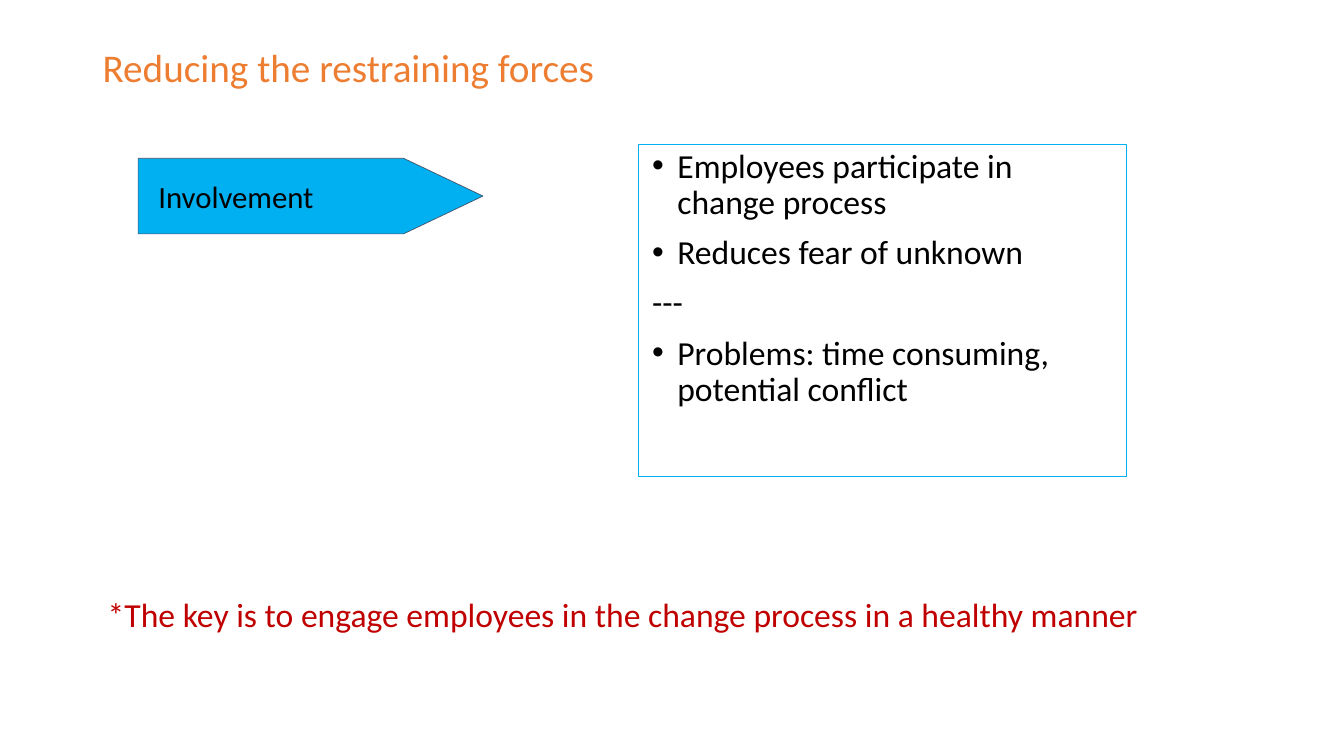
from lxml import etree
from pptx import Presentation
from pptx.dml.color import RGBColor
from pptx.enum.shapes import MSO_SHAPE
from pptx.enum.text import MSO_ANCHOR, PP_ALIGN
from pptx.oxml.ns import qn
from pptx.util import Inches, Pt

RECTANGLE, PENTAGON = MSO_SHAPE.RECTANGLE, MSO_SHAPE.PENTAGON
TOP, MIDDLE = MSO_ANCHOR.TOP, MSO_ANCHOR.MIDDLE
LEFT = PP_ALIGN.LEFT

FONT = "Calibri"
BLACK, ORANGE, RED = "000000", "ED7D31", "C00000"
SKY, SLATE = "00B0F0", "44546A"
SEPARATOR = "---"
INVOLVEMENT_POINTS = [
    "Employees participate in change process",
    "Reduces fear of unknown",
    SEPARATOR,
    "Problems: time consuming, potential conflict",
]


def rgb(hex_color):
    return RGBColor.from_string(hex_color)


def add_text(frame, text, size=24, color=BLACK, line_spacing=1.0, space_before=0):
    """Fill the first paragraph if it is free, otherwise append one."""
    paragraph = frame.paragraphs[0]
    if paragraph.runs:
        paragraph = frame.add_paragraph()
    paragraph.alignment = LEFT
    paragraph.line_spacing = line_spacing
    paragraph.space_before = Pt(space_before)
    run = paragraph.add_run()
    run.text = text
    run.font.name = FONT
    run.font.size = Pt(size)
    run.font.color.rgb = rgb(color)
    return paragraph


def set_indent(paragraph, margin, first_line=0, bullet=None):
    properties = paragraph._p.get_or_add_pPr()
    properties.set("marL", str(Inches(margin)))
    properties.set("indent", str(Inches(first_line)))
    if bullet:
        etree.SubElement(properties, qn("a:buFont")).set("typeface", "Arial")
        etree.SubElement(properties, qn("a:buChar")).set("char", bullet)
    else:
        etree.SubElement(properties, qn("a:buNone"))


def add_label(slide, box, text, anchor=TOP, **text_format):
    frame = slide.shapes.add_textbox(*map(Inches, box)).text_frame
    frame.word_wrap = True
    frame.vertical_anchor = anchor
    add_text(frame, text, **text_format)


def add_panel(slide, kind, box, line, line_width, fill=None, anchor=TOP):
    panel = slide.shapes.add_shape(kind, *map(Inches, box))
    panel.shadow.inherit = False
    if fill:
        panel.fill.solid()
        panel.fill.fore_color.rgb = rgb(fill)
    else:
        panel.fill.background()
    panel.line.color.rgb = rgb(line)
    panel.line.width = Pt(line_width)
    panel.text_frame.word_wrap = True
    panel.text_frame.vertical_anchor = anchor
    return panel


def add_method_arrow(slide, box, method):
    arrow = add_panel(slide, PENTAGON, box, SLATE, 0.5, fill=SKY, anchor=MIDDLE)
    arrow.adjustments[0] = 1.05
    arrow.text_frame.margin_left = Inches(0.2)
    add_text(arrow.text_frame, method, size=22)


def add_points_panel(slide, box, points):
    frame = add_panel(slide, RECTANGLE, box, SKY, 0.75).text_frame
    for point in points:
        paragraph = add_text(frame, point, line_spacing=0.9, space_before=10)
        if point == SEPARATOR:
            set_indent(paragraph, 0.04)
        else:
            set_indent(paragraph, 0.29, -0.25, "•")


def build_forces_slide(slide):
    # Title
    add_label(slide, (0.92, 0.18, 8.45, 1.02), "Reducing the restraining forces",
              anchor=MIDDLE, size=28, color=ORANGE, line_spacing=0.9)
    # Method and its effects
    add_points_panel(slide, (6.33, 1.43, 4.84, 3.3), INVOLVEMENT_POINTS)
    add_method_arrow(slide, (1.37, 1.57, 3.42, 0.75), "Involvement")
    # Takeaway
    add_label(slide, (0.97, 5.84, 11.88, 0.5),
              "*The key is to engage employees in the change process in a healthy manner",
              color=RED)


def main():
    deck = Presentation()
    deck.slide_width, deck.slide_height = Inches(13.33), Inches(7.5)
    build_forces_slide(deck.slides.add_slide(deck.slide_layouts[6]))
    deck.save("out.pptx")


if __name__ == "__main__":
    main()
